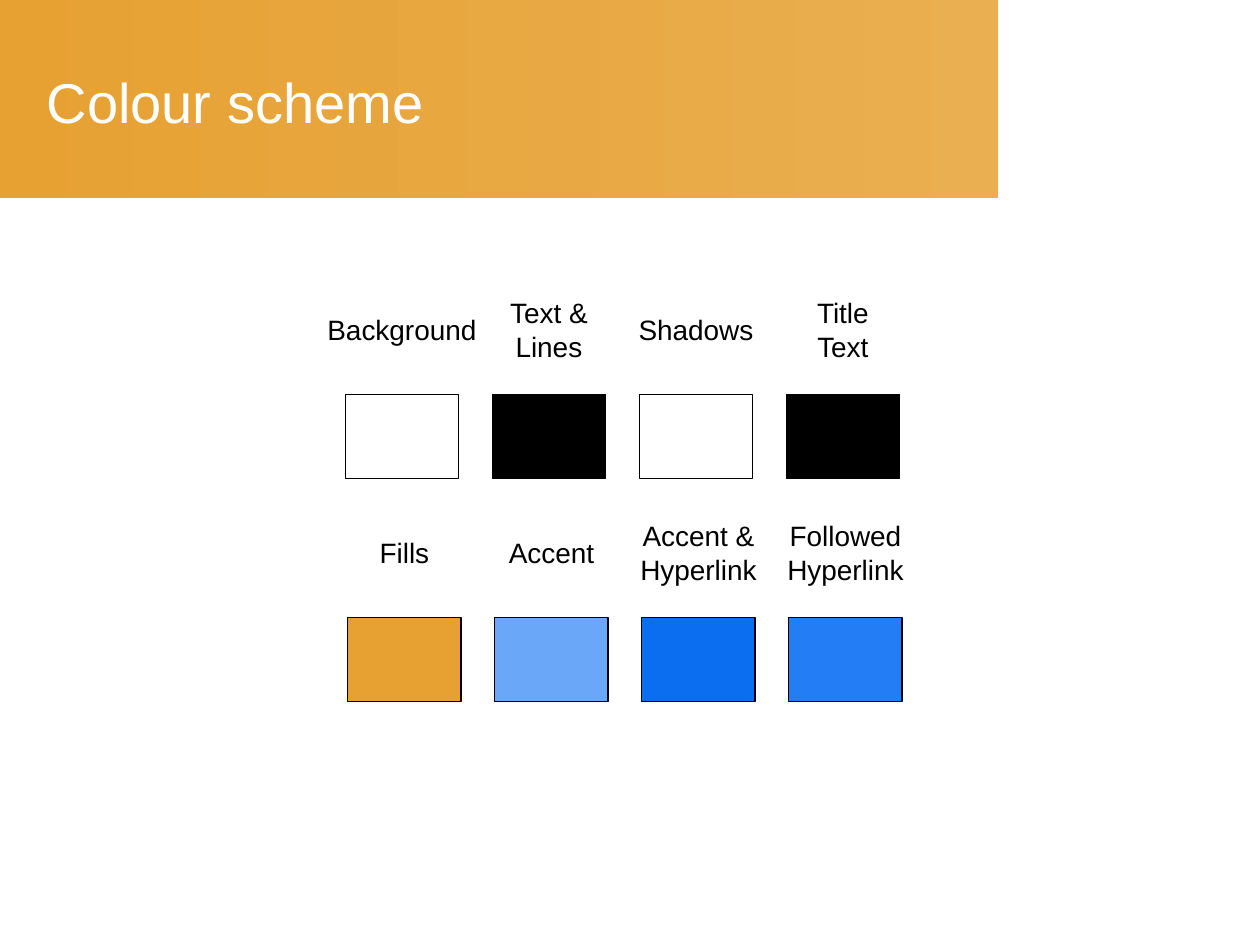
"""Build the colour scheme slide."""
import pptx
import pptx.util
import pptx.dml.color
import pptx.enum.shapes
import pptx.enum.text

Inches = pptx.util.Inches
Pt = pptx.util.Pt
RGBColor = pptx.dml.color.RGBColor
Align = pptx.enum.text.PP_ALIGN
Anchor = pptx.enum.text.MSO_ANCHOR
Fit = pptx.enum.text.MSO_AUTO_SIZE
RECT = pptx.enum.shapes.MSO_SHAPE.RECTANGLE

BLACK = RGBColor(0x00, 0x00, 0x00)
WHITE = RGBColor(0xFF, 0xFF, 0xFF)
AMBER = RGBColor(0xE6, 0xA1, 0x32)
PALE = RGBColor(0xEA, 0xAF, 0x51)
SKY = RGBColor(0x6B, 0xA7, 0xF8)
BLUE = RGBColor(0x0B, 0x6D, 0xEF)
AZURE = RGBColor(0x23, 0x7D, 0xF5)

FONT = "Arial"
WIDE, HIGH = 10, 7.5
LEFT, COL = 3.19, 3.5 / 3
TOP, ROW = 3.13, 1.77
BOX_W, BOX_H = 0.9, 0.67
RISE, SHIFT = 0.51, 0.02

ROWS = [
    [("Background", 1.39, WHITE), ("Text &\nLines", 0.84, BLACK),
     ("Shadows", 1.11, WHITE), ("Title\vText", 0.63, BLACK)],
    [("Fills", 0.59, AMBER), ("Accent", 0.88, SKY),
     ("Accent &\nHyperlink", 1.12, BLUE), ("Followed\nHyperlink", 1.12, AZURE)],
]


def style(frame, size, color, align):
    """Format every paragraph and run of a text frame."""
    for para in frame.paragraphs:
        para.alignment = align
        for run in para.runs:
            run.font.name = FONT
            run.font.size = Pt(size)
            run.font.color.rgb = color


def add_rect(slide, x, y, w, h):
    """Add a rectangle without a shadow."""
    rect = slide.shapes.add_shape(RECT, Inches(x), Inches(y), Inches(w), Inches(h))
    rect.shadow.inherit = False
    return rect


def add_band(slide):
    """Add the shaded band behind the title."""
    band = add_rect(slide, 0, 0, 7.92, 1.57)
    band.line.fill.background()
    band.fill.gradient()
    band.fill.gradient_angle = 0
    for stop, color in zip(band.fill.gradient_stops, (AMBER, PALE)):
        stop.color.rgb = color
    slide.shapes._spTree.insert(2, band._element)


def set_title(slide, text):
    """Place and format the title."""
    title = slide.shapes.title
    title.left, title.top = Inches(0.27), Inches(0.3)
    title.width, title.height = Inches(7.48), Inches(1.01)
    frame = title.text_frame
    frame.text = text
    frame.auto_size = Fit.NONE
    frame.vertical_anchor = Anchor.MIDDLE
    style(frame, 32, WHITE, Align.LEFT)


def add_swatch(slide, mid, top, color):
    """Add an outlined colour sample centred on mid."""
    box = add_rect(slide, mid - BOX_W / 2, top, BOX_W, BOX_H)
    box.fill.solid()
    box.fill.fore_color.rgb = color
    box.line.color.rgb = BLACK
    box.line.width = Pt(0.75)


def add_label(slide, mid, level, width, text):
    """Add a label centred on the point mid, level."""
    high = 0.64 if len(text.splitlines()) > 1 else 0.37
    box = slide.shapes.add_textbox(Inches(mid - width / 2), Inches(level - high / 2),
                                   Inches(width), Inches(high))
    frame = box.text_frame
    frame.text = text
    frame.word_wrap = False
    frame.auto_size = Fit.SHAPE_TO_FIT_TEXT
    frame.margin_left = frame.margin_right = Inches(0.05)
    style(frame, 16, BLACK, Align.CENTER)


def main():
    """Build and save the slide."""
    deck = pptx.Presentation()
    deck.slide_width, deck.slide_height = Inches(WIDE), Inches(HIGH)
    slide = deck.slides.add_slide(deck.slide_layouts[5])
    add_band(slide)
    set_title(slide, "Colour scheme")
    for row, cells in enumerate(ROWS):
        top = TOP + row * ROW
        for col, (text, width, color) in enumerate(cells):
            mid = LEFT + col * COL + row * SHIFT
            add_swatch(slide, mid, top, color)
            add_label(slide, mid, top - RISE, width, text)
    deck.save("out.pptx")


if __name__ == "__main__":
    main()
